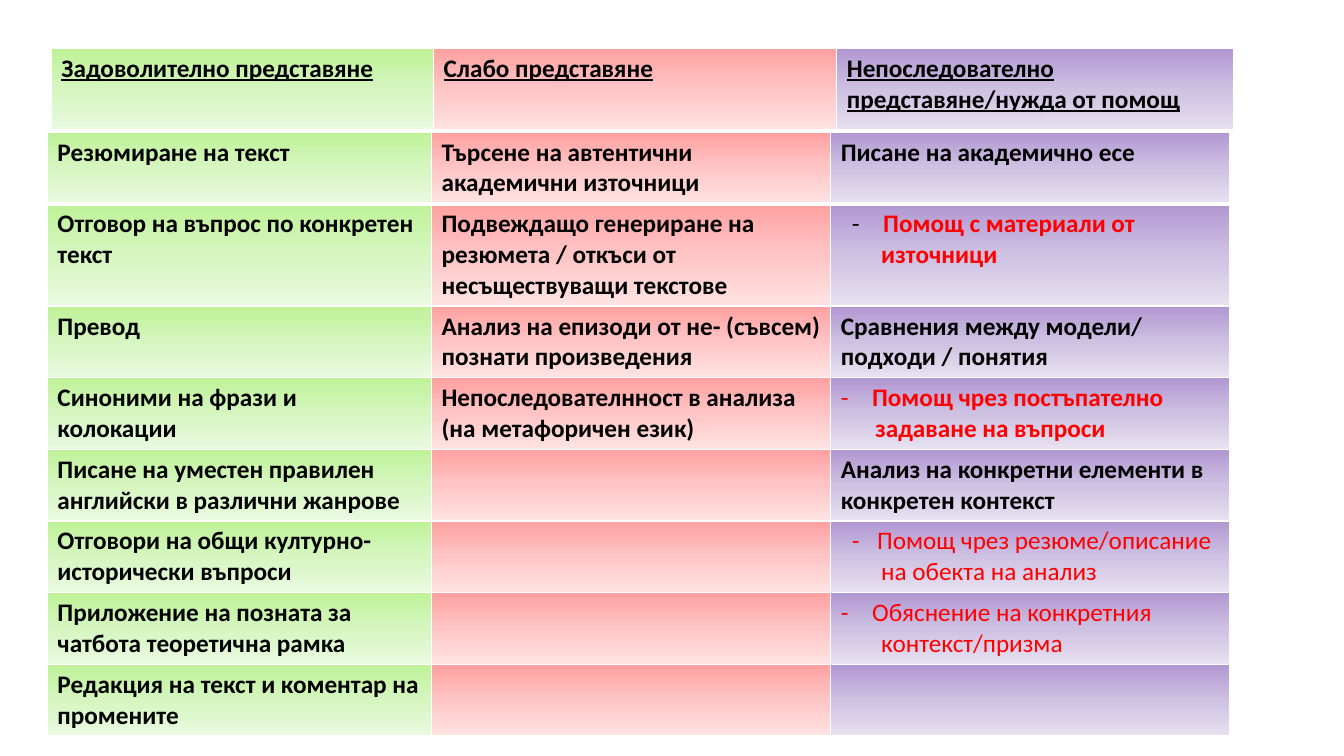
from dataclasses import dataclass

from lxml.etree import SubElement
from pptx import Presentation
from pptx.dml.color import RGBColor
from pptx.oxml.ns import qn
from pptx.util import Inches, Pt


@dataclass(frozen=True)
class Theme:
    font: str = "Calibri"
    size: int = 18
    text: str = "000000"
    accent: str = "FF0000"
    border: str = "FFFFFF"
    thin: int = 1
    thick: int = 3
    gradients: tuple = (
        ("BEF297", "D5F6C0", "EAFAE0"),
        ("FFA0A0", "FFC5C5", "FFE3E3"),
        ("B197D2", "CEC1E2", "E7E1F0"),
    )


@dataclass(frozen=True)
class Entry:
    """Cell text; an advice entry has a dash and a continuation line."""
    text: str = ""
    underline: bool = False


@dataclass(frozen=True)
class Advice:
    """Red bulleted line with an indented second line; offsets in inches."""
    first: str
    second: str
    dash_at: float
    first_at: float
    second_at: float
    bold: bool
    dash_color: str


@dataclass(frozen=True)
class Grid:
    left: float
    top: float
    columns: tuple
    heights: tuple
    rows: list


THEME = Theme()

HEADINGS = Grid(0.51, 0.48, (3.79, 4, 3.94), (0.82,), [
    [Entry("Задоволително представяне", True), Entry("Слабо представяне", True),
     Entry("Непоследователно представяне/нужда от помощ", True)],
])

FINDINGS = Grid(0.47, 1.31, (3.81, 3.96, 3.96), (0.69, 0.97) + (0.69,) * 6, [
    [Entry("Резюмиране на текст"), Entry("Търсене на автентични академични източници"),
     Entry("Писане на академично есе")],
    [Entry("Отговор на въпрос по конкретен текст"),
     Entry("Подвеждащо генериране на резюмета / откъси от несъществуващи текстове"),
     Advice("Помощ с материали от", "източници", 0.11, 0.42, 0.4, True, THEME.text)],
    [Entry("Превод"), Entry("Анализ на епизоди от не- (съвсем) познати произведения"),
     Entry("Сравнения между модели/ подходи / понятия")],
    [Entry("Синоними на фрази и колокации"),
     Entry("Непоследователнност в анализа (на метафоричен език)"),
     Advice("Помощ чрез постъпателно", "задаване на въпроси",
            0, 0.31, 0.34, True, THEME.accent)],
    [Entry("Писане на уместен правилен английски в различни жанрове"), Entry(),
     Entry("Анализ на конкретни елементи в конкретен контекст")],
    [Entry("Отговори на общи културно-исторически въпроси"), Entry(),
     Advice("Помощ чрез резюме/описание", "на обекта на анализ",
            0.11, 0.36, 0.4, False, THEME.accent)],
    [Entry("Приложение на позната за чатбота теоретична рамка"), Entry(),
     Advice("Обяснение на конкретния", "контекст/призма",
            0, 0.31, 0.4, False, THEME.accent)],
    [Entry("Редакция на текст и коментар на промените"), Entry(), Entry()],
])


def add_solid(parent, color: str) -> None:
    solid = SubElement(parent, qn("a:solidFill"))
    SubElement(solid, qn("a:srgbClr"), val=color)


def paint_cell(cell, gradient: tuple, top: int, bottom: int) -> None:
    """Give the cell white borders (widths in points) and a vertical gradient."""
    properties = cell._tc.get_or_add_tcPr()
    widths = {"a:lnL": THEME.thin, "a:lnR": THEME.thin, "a:lnT": top, "a:lnB": bottom}
    for side, width in widths.items():
        add_solid(SubElement(properties, qn(side), w=str(Pt(width))), THEME.border)
    fill = SubElement(properties, qn("a:gradFill"), rotWithShape="1")
    stops = SubElement(fill, qn("a:gsLst"))
    for index, color in enumerate(gradient):
        stop = SubElement(stops, qn("a:gs"), pos=str(index * 50000))
        SubElement(stop, qn("a:srgbClr"), val=color)
    SubElement(fill, qn("a:lin"), ang="5400000", scaled="0")


def indent(paragraph, margin: float, first_line: float = 0):
    properties = paragraph._p.get_or_add_pPr()
    properties.set("marL", str(Inches(margin)))
    properties.set("indent", str(Inches(first_line)))
    return properties


def add_dash(properties, color: str) -> None:
    bullet_color = SubElement(properties, qn("a:buClr"))
    SubElement(bullet_color, qn("a:srgbClr"), val=color)
    SubElement(properties, qn("a:buFont"), typeface=THEME.font)
    SubElement(properties, qn("a:buChar"), char="-")


def write_cell(cell, entry: Entry | Advice) -> None:
    frame = cell.text_frame
    color, bold, underline = THEME.text, True, False
    if isinstance(entry, Advice):
        color, bold = THEME.accent, entry.bold
        frame.text = f"{entry.first}\n{entry.second}"
        first, second = frame.paragraphs
        add_dash(indent(first, entry.first_at, entry.dash_at - entry.first_at),
                 entry.dash_color)
        indent(second, entry.second_at)
    else:
        frame.text = entry.text
        underline = entry.underline
    for paragraph in frame.paragraphs:
        paragraph.font.size = Pt(THEME.size)
        for span in paragraph.runs:
            span.font.name = THEME.font
            span.font.size = Pt(THEME.size)
            span.font.bold = bold
            span.font.underline = underline
            span.font.color.rgb = RGBColor.from_string(color)


def draw_grid(page, grid: Grid) -> None:
    """Draw a table whose first row ends in a thick border."""
    table = page.shapes.add_table(
        len(grid.rows), len(grid.columns), Inches(grid.left), Inches(grid.top),
        Inches(sum(grid.columns)), Inches(sum(grid.heights))).table
    table.first_row = table.horz_banding = False
    for column, width in zip(table.columns, grid.columns):
        column.width = Inches(width)
    for row_index, (height, entries) in enumerate(zip(grid.heights, grid.rows)):
        table.rows[row_index].height = Inches(height)
        top = THEME.thick if row_index == 1 else THEME.thin
        bottom = THEME.thick if row_index == 0 else THEME.thin
        for column_index, entry in enumerate(entries):
            cell = table.cell(row_index, column_index)
            write_cell(cell, entry)
            paint_cell(cell, THEME.gradients[column_index], top, bottom)


def main() -> None:
    deck = Presentation()
    deck.slide_width, deck.slide_height = Inches(13.33), Inches(7.5)
    page = deck.slides.add_slide(deck.slide_layouts[6])
    for grid in (FINDINGS, HEADINGS):
        draw_grid(page, grid)
    deck.save("out.pptx")


if __name__ == "__main__":
    main()
